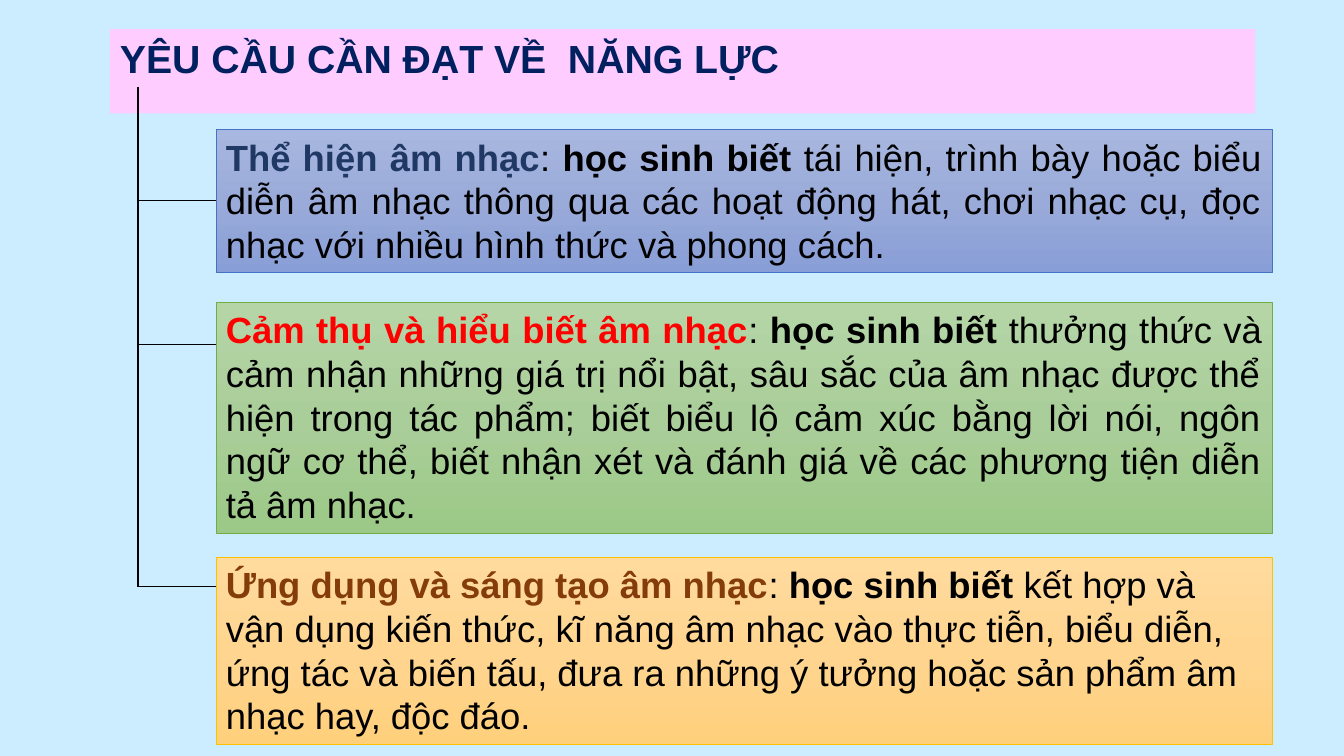
import copy

import pptx
import pptx.util
import pptx.dml.color
import pptx.enum.shapes
import pptx.enum.text
import pptx.oxml.ns
import lxml.etree

Pt = pptx.util.Pt
qn = pptx.oxml.ns.qn
ALIGN = pptx.enum.text.PP_ALIGN

# Content
TITLE = "YÊU CẦU CẦN ĐẠT VỀ  NĂNG LỰC"
LEAD = "học sinh biết "
COMPETENCIES = [
    {
        "name": "Thể hiện âm nhạc",
        "detail": "tái hiện, trình bày hoặc biểu diễn âm nhạc thông qua các hoạt động "
                  "hát, chơi nhạc cụ, đọc nhạc với nhiều hình thức và phong cách.",
        "theme": "blue", "top": 92.7, "height": 101.8, "branch": 143.2,
        "align": ALIGN.JUSTIFY,
    },
    {
        "name": "Cảm thụ và hiểu biết âm nhạc",
        "detail": "thưởng thức và cảm nhận những giá trị nổi bật, sâu sắc của âm nhạc "
                  "được thể hiện trong tác phẩm; biết biểu lộ cảm xúc bằng lời nói, "
                  "ngôn ngữ cơ thể, biết nhận xét và đánh giá về các phương tiện diễn "
                  "tả âm nhạc.",
        "theme": "green", "top": 216, "height": 164.9, "branch": 246.2,
        "align": ALIGN.JUSTIFY,
    },
    {
        "name": "Ứng dụng và sáng tạo âm nhạc",
        "detail": "kết hợp và vận dụng kiến thức, kĩ năng âm nhạc vào thực tiễn, biểu "
                  "diễn, ứng tác và biến tấu, đưa ra những ý tưởng hoặc sản phẩm âm "
                  "nhạc hay, độc đáo.",
        "theme": "orange", "top": 398.2, "height": 133.3, "branch": 419,
        "align": ALIGN.LEFT,
    },
]

COLORS = {
    "background": "CCECFF", "title_fill": "FFCCFF", "title_text": "002060",
    "black": "000000",
    "blue_name": "203864", "blue_line": "4472C4",
    "blue_start": "A8B7DF", "blue_middle": "9AABD9", "blue_end": "889ED7",
    "green_name": "FF0000", "green_line": "70AD47",
    "green_start": "B5D5A7", "green_middle": "AACE9A", "green_end": "9CC987",
    "orange_name": "843C0B", "orange_line": "FFC000",
    "orange_start": "FFDB9E", "orange_middle": "FFD590", "orange_end": "FFD07C",
}

# Layout in points
SLIDE_WIDTH, SLIDE_HEIGHT = 960, 540
TITLE_LEFT, TITLE_TOP, TITLE_WIDTH, TITLE_HEIGHT = 78.5, 20.9, 818, 41.2
BOX_LEFT, BOX_WIDTH = 154.2, 754.6
TRUNK_LEFT = 98.6
FONT = "Arial"


def color(name):
    return pptx.dml.color.RGBColor.from_string(COLORS[name])


def set_frame(text_frame):
    text_frame.word_wrap = True
    text_frame.auto_size = pptx.enum.text.MSO_AUTO_SIZE.SHAPE_TO_FIT_TEXT
    text_frame.vertical_anchor = pptx.enum.text.MSO_ANCHOR.TOP
    text_frame.margin_left = text_frame.margin_right = Pt(7.2)
    text_frame.margin_top = text_frame.margin_bottom = Pt(3.6)


def set_gradient(shape, theme):
    shape.fill.gradient()
    shape.fill.gradient_angle = 270
    stop_list = shape.fill._xPr.find(qn("a:gradFill")).find(qn("a:gsLst"))
    middle = copy.deepcopy(stop_list[0])
    middle.set("pos", "50000")
    stop_list.insert(1, middle)
    for stop, part in zip(shape.fill.gradient_stops, ("start", "middle", "end")):
        stop.color.rgb = color(f"{theme}_{part}")


def add_competency(slide, item):
    shape = slide.shapes.add_shape(
        pptx.enum.shapes.MSO_SHAPE.RECTANGLE,
        Pt(BOX_LEFT), Pt(item["top"]), Pt(BOX_WIDTH), Pt(item["height"]))
    shape.shadow.inherit = False
    set_gradient(shape, item["theme"])
    shape.line.color.rgb = color(item["theme"] + "_line")
    shape.line.width = Pt(0.5)
    set_frame(shape.text_frame)

    paragraph = shape.text_frame.paragraphs[0]
    paragraph.alignment = item["align"]
    paragraph.font.name = FONT
    paragraph.font.size = Pt(26)
    pieces = [(item["name"], True, item["theme"] + "_name"), (": ", False, "black"),
              (LEAD, True, "black"), (item["detail"], False, "black")]
    for text, bold, color_name in pieces:
        run = paragraph.add_run()
        run.text = text
        run.font.bold = bold
        run.font.color.rgb = color(color_name)


def add_line(slide, start, end, width):
    connector = slide.shapes.add_connector(
        pptx.enum.shapes.MSO_CONNECTOR.STRAIGHT, *map(Pt, start + end))
    connector.line.color.rgb = color("black")
    connector.line.width = Pt(width)
    lxml.etree.SubElement(connector._element.spPr, qn("a:effectLst"))


def main():
    presentation = pptx.Presentation()
    presentation.slide_width = Pt(SLIDE_WIDTH)
    presentation.slide_height = Pt(SLIDE_HEIGHT)
    slide = presentation.slides.add_slide(presentation.slide_layouts[5])
    slide.background.fill.solid()
    slide.background.fill.fore_color.rgb = color("background")

    # Title band
    title = slide.shapes.title
    title.left, title.top = Pt(TITLE_LEFT), Pt(TITLE_TOP)
    title.width, title.height = Pt(TITLE_WIDTH), Pt(TITLE_HEIGHT)
    title.fill.solid()
    title.fill.fore_color.rgb = color("title_fill")
    title.text_frame.text = TITLE
    set_frame(title.text_frame)
    paragraph = title.text_frame.paragraphs[0]
    paragraph.alignment = ALIGN.JUSTIFY
    paragraph.font.name = FONT
    paragraph.font.size = Pt(28)
    paragraph.font.bold = True
    paragraph.font.color.rgb = color("title_text")

    # Competency boxes
    for item in COMPETENCIES:
        add_competency(slide, item)

    # Trunk from the title, with a branch to each box
    trunk_bottom = COMPETENCIES[-1]["branch"]
    add_line(slide, (TRUNK_LEFT, TITLE_TOP + TITLE_HEIGHT), (TRUNK_LEFT, trunk_bottom), 1.5)
    for item in COMPETENCIES:
        add_line(slide, (TRUNK_LEFT, item["branch"]), (BOX_LEFT, item["branch"]), 0.5)

    presentation.save("out.pptx")


if __name__ == "__main__":
    main()
